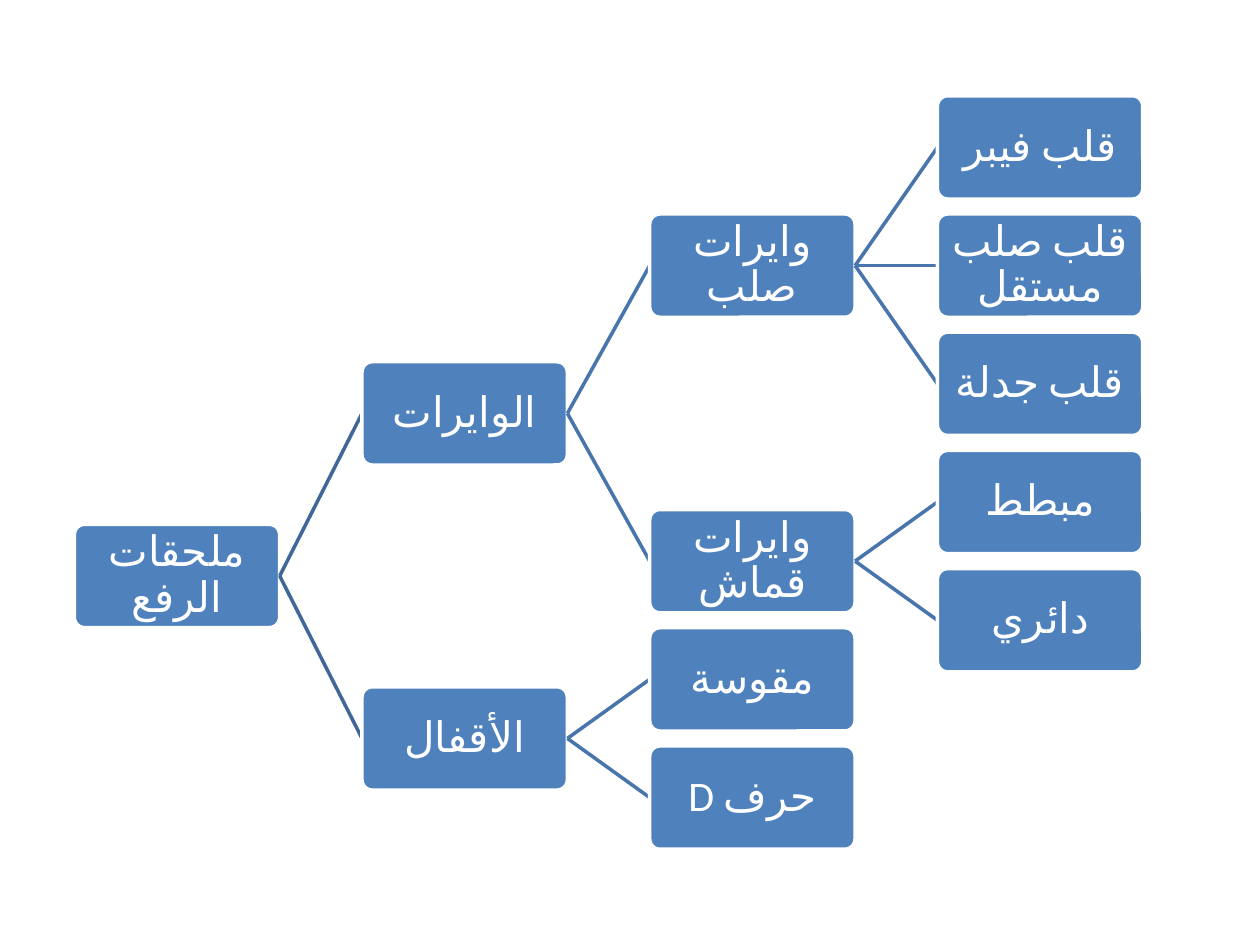
from collections import defaultdict
from dataclasses import dataclass, field

from lxml import etree
from pptx import Presentation
from pptx.dml.color import RGBColor
from pptx.enum.shapes import MSO_CONNECTOR, MSO_SHAPE
from pptx.enum.text import MSO_ANCHOR, PP_ALIGN
from pptx.oxml.ns import qn
from pptx.util import Inches, Pt

ROUNDED = MSO_SHAPE.ROUNDED_RECTANGLE
STRAIGHT = MSO_CONNECTOR.STRAIGHT
MIDDLE = MSO_ANCHOR.MIDDLE
CENTER = PP_ALIGN.CENTER

COLORS = {
    "box": "4F81BD",
    "white": "FFFFFF",
    "root_link": "3F6797",
    "branch_link": "4875AC",
}
BOX_WIDTH, BOX_HEIGHT = 1.63, 0.82
FIRST_LEFT, LAST_LEFT = 0.59, 7.44
COLUMN_STEP = (LAST_LEFT - FIRST_LEFT) / 3
FIRST_CENTER, LAST_CENTER = 1.17, 6.33
ROW_STEP = (LAST_CENTER - FIRST_CENTER) / 5.5
INSET = 0.02


@dataclass
class Node:
    label: str
    children: list = field(default_factory=list)
    level: int = 0
    row: float = 0

    @property
    def left(self):
        return FIRST_LEFT + self.level * COLUMN_STEP

    @property
    def center(self):
        return FIRST_CENTER + self.row * ROW_STEP


def lifting_accessories():
    steel = Node("وايرات صلب", [
        Node("قلب فيبر"), Node("قلب صلب مستقل"), Node("قلب جدلة"),
    ])
    fabric = Node("وايرات قماش", [Node("مبطط"), Node("دائري")])
    shackles = Node("الأقفال", [Node("مقوسة"), Node("حرف D")])
    return Node("ملحقات الرفع", [Node("الوايرات", [steel, fabric]), shackles])


def arrange(node, next_rows, level=0):
    node.level = level
    for child in node.children:
        arrange(child, next_rows, level + 1)
    if node.children:
        node.row = (node.children[0].row + node.children[-1].row) / 2
    else:
        node.row = next_rows[level]
    next_rows[level] = node.row + 1


def color(name):
    return RGBColor.from_string(COLORS[name])


def write_text(frame, text, *, size=24, font="Calibri", ink="white",
               align=CENTER, spacing=0.9, language="ar-EG"):
    frame.word_wrap = True
    frame.vertical_anchor = MIDDLE
    frame.margin_left = frame.margin_right = Inches(INSET)
    frame.margin_top = frame.margin_bottom = Inches(INSET)
    paragraph = frame.paragraphs[0]
    paragraph.alignment = align
    paragraph.line_spacing = spacing
    paragraph._p.get_or_add_pPr().set("rtl", "1")
    run = paragraph.add_run()
    run.text = text
    run.font.size = Pt(size)
    run.font.name = font
    run.font.color.rgb = color(ink)
    properties = run._r.get_or_add_rPr()
    properties.set("lang", language)
    etree.SubElement(properties, qn("a:cs")).set("typeface", font)


def add_box(slide, node):
    box = slide.shapes.add_shape(
        ROUNDED, Inches(node.left), Inches(node.center - BOX_HEIGHT / 2),
        Inches(BOX_WIDTH), Inches(BOX_HEIGHT))
    box.adjustments[0] = 0.1
    box.shadow.inherit = False
    box.fill.solid()
    box.fill.fore_color.rgb = color("box")
    box.line.color.rgb = color("white")
    box.line.width = Pt(2)
    write_text(box.text_frame, node.label)


def add_link(slide, parent, child):
    link = slide.shapes.add_connector(
        STRAIGHT, Inches(parent.left + BOX_WIDTH), Inches(parent.center),
        Inches(child.left), Inches(child.center))
    link.line.color.rgb = color("branch_link" if parent.level else "root_link")
    link.line.width = Pt(2)
    etree.SubElement(link._element.spPr, qn("a:effectLst"))


def draw_tree(slide, node):
    add_box(slide, node)
    for child in node.children:
        add_link(slide, node, child)
        draw_tree(slide, child)


def main():
    presentation = Presentation()
    presentation.slide_width = Inches(10)
    presentation.slide_height = Inches(7.5)
    slide = presentation.slides.add_slide(presentation.slide_layouts[6])
    root = lifting_accessories()
    arrange(root, defaultdict(int))
    draw_tree(slide, root)
    presentation.save("out.pptx")


if __name__ == "__main__":
    main()
